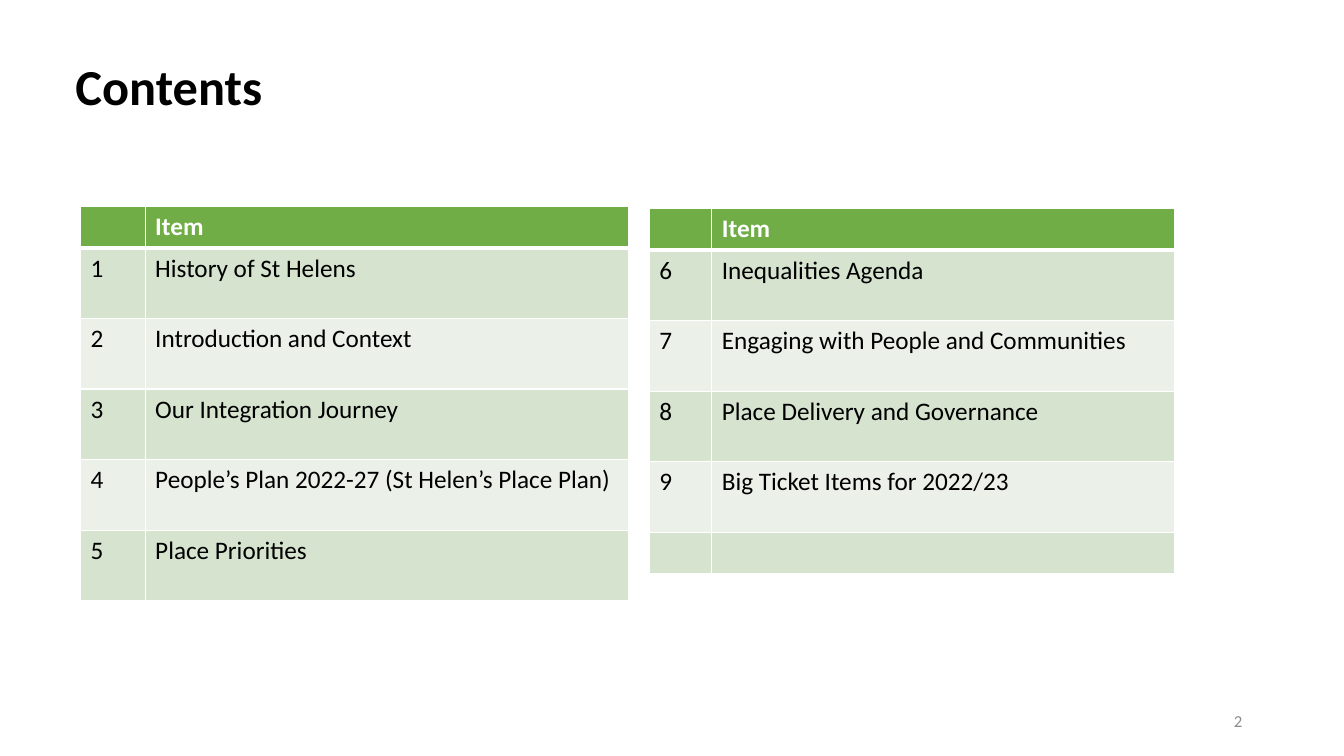
from lxml.etree import SubElement
from pptx import Presentation
from pptx.dml.color import RGBColor
from pptx.enum.text import MSO_ANCHOR as Anchor, PP_ALIGN as Align
from pptx.oxml.ns import qn
from pptx.util import Inches, Pt

WHITE = RGBColor(0xFF, 0xFF, 0xFF)
BLACK = RGBColor(0x00, 0x00, 0x00)
GREY = RGBColor(0x8C, 0x8C, 0x8C)
GREEN = RGBColor(0x70, 0xAD, 0x47)
BANDS = (RGBColor(0xD5, 0xE3, 0xCF), RGBColor(0xEB, 0xF1, 0xE9))

SLIDE_WIDTH, SLIDE_HEIGHT = 13.33, 7.5
SHORT_ROW, ITEM_ROW = 0.41, 0.7
THIN, THICK = 1, 3

HEADER = ("", "Item")
TABLES = [
    {"left": 0.8, "top": 2.05, "columns": (0.64, 4.79), "items": [
        ("1", "History of St Helens"),
        ("2", "Introduction and Context"),
        ("3", "Our Integration Journey"),
        ("4", "People’s Plan 2022-27 (St Helen’s Place Plan)"),
        ("5", "Place Priorities"),
    ]},
    {"left": 6.44, "top": 2.07, "columns": (0.62, 4.59), "items": [
        ("6", "Inequalities Agenda"),
        ("7", "Engaging with People and Communities"),
        ("8", "Place Delivery and Governance"),
        ("9", "Big Ticket Items for 2022/23"),
        ("", ""),
    ]},
]
TEXTS = [
    {"text": "Contents", "box": (0.65, 0.5, 4.16, 0.71), "anchor": Anchor.TOP,
     "align": Align.LEFT, "font": {"size": Pt(36), "bold": True}, "color": BLACK},
    {"text": "2", "box": (9.42, 6.95, 3, 0.4), "anchor": Anchor.MIDDLE,
     "align": Align.RIGHT, "font": {"size": Pt(12), "bold": False}, "color": GREY},
]


def write(paragraph, text, font, color):
    paragraph.text = text
    for name, value in {"name": "Calibri", **font}.items():
        setattr(paragraph.font, name, value)
    paragraph.font.color.rgb = color


def add_text(slide, content):
    shape = slide.shapes.add_textbox(*map(Inches, content["box"]))
    frame = shape.text_frame
    frame.word_wrap = True
    frame.vertical_anchor = content["anchor"]
    paragraph = frame.paragraphs[0]
    paragraph.alignment = content["align"]
    write(paragraph, content["text"], content["font"], content["color"])


def set_borders(cell, top, bottom):
    properties = cell._tc.get_or_add_tcPr()
    for side, width in {"L": THIN, "R": THIN, "T": top, "B": bottom}.items():
        line = SubElement(properties, qn(f"a:ln{side}"), w=str(Pt(width)))
        fill = SubElement(line, qn("a:solidFill"))
        SubElement(fill, qn("a:srgbClr"), val=str(WHITE))


def add_contents_table(slide, content):
    rows = [HEADER, *content["items"]]
    heights = [ITEM_ROW if number else SHORT_ROW for number, _ in rows]
    columns = content["columns"]
    table = slide.shapes.add_table(
        len(rows), len(columns), Inches(content["left"]), Inches(content["top"]),
        Inches(sum(columns)), Inches(sum(heights))).table
    for column, width in zip(table.columns, columns):
        column.width = Inches(width)
    for index, (texts, height) in enumerate(zip(rows, heights)):
        is_header = index == 0
        table.rows[index].height = Inches(height)
        for cell, text in zip(table.rows[index].cells, texts):
            set_borders(cell, THICK if index == 1 else THIN, THICK if is_header else THIN)
            cell.fill.solid()
            cell.fill.fore_color.rgb = GREEN if is_header else BANDS[(index - 1) % 2]
            write(cell.text_frame.paragraphs[0], text,
                  {"size": Pt(18), "bold": is_header}, WHITE if is_header else BLACK)


def main():
    """Build the contents slide with its two tables of numbered items."""
    presentation = Presentation()
    presentation.slide_width = Inches(SLIDE_WIDTH)
    presentation.slide_height = Inches(SLIDE_HEIGHT)
    slide = presentation.slides.add_slide(presentation.slide_layouts[6])
    for content in TEXTS:
        add_text(slide, content)
    for content in TABLES:
        add_contents_table(slide, content)
    presentation.save("out.pptx")


if __name__ == "__main__":
    main()
